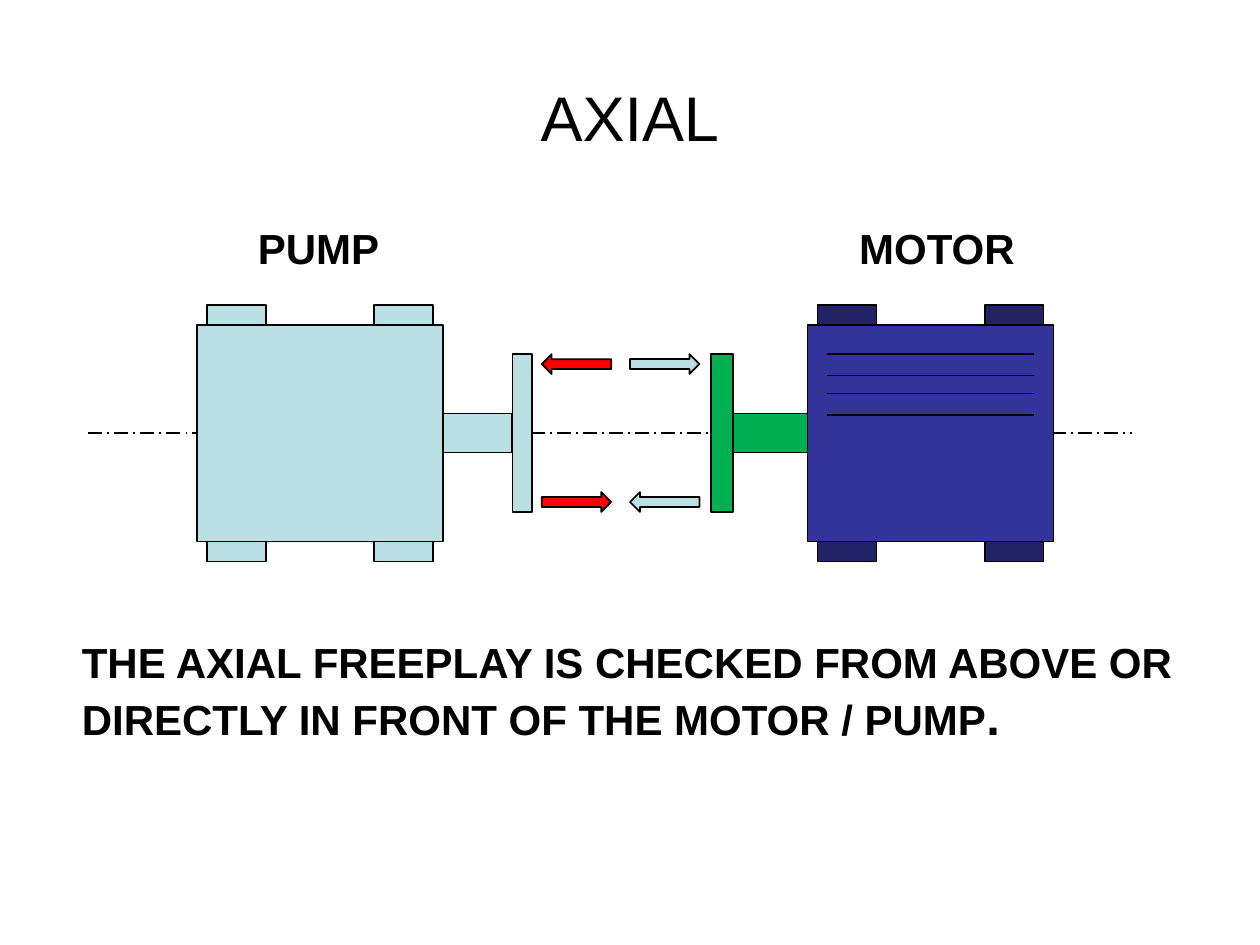
from pptx import Presentation
from pptx.dml.color import RGBColor
from pptx.enum import dml, shapes, text
from pptx.oxml.ns import qn
from pptx.util import Cm, Pt

BLACK = RGBColor(0x00, 0x00, 0x00)
PALE_BLUE = RGBColor(0xBB, 0xE0, 0xE3)
NAVY = RGBColor(0x33, 0x33, 0x99)
DARK_NAVY = RGBColor(0x22, 0x22, 0x67)
GREEN = RGBColor(0x00, 0xB0, 0x50)
RED = RGBColor(0xFF, 0x00, 0x00)
RECT = shapes.MSO_SHAPE.RECTANGLE
ARROW = shapes.MSO_SHAPE.RIGHT_ARROW


def add_part(slide, box, color, kind=RECT, rotation=0):
    part = slide.shapes.add_shape(kind, *map(Cm, box))
    part.shadow.inherit = False
    part.fill.solid()
    part.fill.fore_color.rgb = color
    part.line.color.rgb = BLACK
    part.line.width = Pt(1)
    part.rotation = rotation


def add_level_line(slide, left, right, y, dash=None):
    line = slide.shapes.add_connector(
        shapes.MSO_CONNECTOR.STRAIGHT, Cm(left), Cm(y), Cm(right), Cm(y))
    line.line.color.rgb = BLACK
    line.line.width = Pt(1)
    if dash:
        line.line.dash_style = dash
    properties = line._element.spPr
    properties.append(properties.makeelement(qn("a:effectLst"), {}))


def add_text(slide, box, *runs, bold=True, align=text.PP_ALIGN.LEFT,
             anchor=text.MSO_ANCHOR.TOP):
    """Place one paragraph made of (wording, size) runs."""
    frame = slide.shapes.add_textbox(*map(Cm, box)).text_frame
    frame.word_wrap = True
    frame.vertical_anchor = anchor
    paragraph = frame.paragraphs[0]
    paragraph.alignment = align
    for wording, size in runs:
        run = paragraph.add_run()
        run.text = wording
        run.font.name = "Arial"
        run.font.size = Pt(size)
        run.font.bold = bold
        run.font.color.rgb = BLACK


def add_machine(slide, box, body_color, foot_color):
    left, top, width, height = box
    foot_width, foot_height, inset = 1.19, 0.8, 0.2
    for y in (top, top + height):
        for x in (left + inset, left + width - inset - foot_width):
            add_part(slide, (x, y - foot_height / 2, foot_width, foot_height), foot_color)
    add_part(slide, box, body_color)


def add_coupling(slide, box, flange_width, color, flange_on_right):
    """Fill the box with a shaft and a full-height flange at one end."""
    left, top, width, height = box
    shaft_width, shaft_height = width - flange_width, 0.79
    shaft_left = left if flange_on_right else left + flange_width
    flange_left = left + shaft_width if flange_on_right else left
    add_part(slide, (shaft_left, top + (height - shaft_height) / 2,
                     shaft_width, shaft_height), color)
    add_part(slide, (flange_left, top, flange_width, height), color)


def add_vents(slide, box):
    left, top, width, _ = box
    for drop in (0.58, 1.02, 1.38, 1.81):
        add_level_line(slide, left + 0.4, left + width - 0.4, top + drop)


def add_freeplay_arrows(slide, box):
    """Arrows part along the top of the box and meet along its bottom."""
    left, top, width, height = box
    length, thickness = 1.4, 0.4
    right, bottom = left + width - length, top + height - thickness
    for x, y, color, rotation in (
            (left, top, RED, 180), (right, top, PALE_BLUE, 0),
            (left, bottom, RED, 0), (right, bottom, PALE_BLUE, 180)):
        add_part(slide, (x, y, length, thickness), color, ARROW, rotation)


def add_diagram(slide, box):
    left, top, width, height = box
    pump = (left, top, 4.96, height)
    motor = (left + width - 4.96, top, 4.96, height)
    flange_top, flange_height = top + 0.59, 3.18

    add_level_line(slide, left - 2.19, left + width + 1.58, top + height / 2,
                   dml.MSO_LINE.LONG_DASH_DOT)
    add_machine(slide, pump, PALE_BLUE, PALE_BLUE)
    add_coupling(slide, (left + 4.96, flange_top, 1.8, flange_height),
                 0.4, PALE_BLUE, flange_on_right=True)
    add_coupling(slide, (motor[0] - 1.95, flange_top, 1.95, flange_height),
                 0.45, GREEN, flange_on_right=False)
    add_machine(slide, motor, NAVY, DARK_NAVY)
    add_vents(slide, motor)
    add_freeplay_arrows(slide, (left + 6.95, flange_top, 3.18, flange_height))
    for label, x in (("PUMP", left + 0.98), ("MOTOR", left + 13.1)):
        add_text(slide, (x, top - 2.18, 4.37, 1.3), (label, 24))


def main():
    deck = Presentation()
    deck.slide_width, deck.slide_height = Cm(25.4), Cm(19.05)
    slide = deck.slides.add_slide(deck.slide_layouts[6])
    add_text(slide, (1.27, 0.76, 22.86, 3.18), ("AXIAL", 36), bold=False,
             align=text.PP_ALIGN.CENTER, anchor=text.MSO_ANCHOR.MIDDLE)
    add_diagram(slide, (3.97, 6.55, 17.27, 4.37))
    add_text(slide, (1.4, 12.7, 22.63, 2.49),
             ("THE AXIAL FREEPLAY IS CHECKED FROM ABOVE OR "
              "DIRECTLY IN FRONT OF THE MOTOR / PUMP", 24), (".", 28))
    deck.save("out.pptx")


if __name__ == "__main__":
    main()
